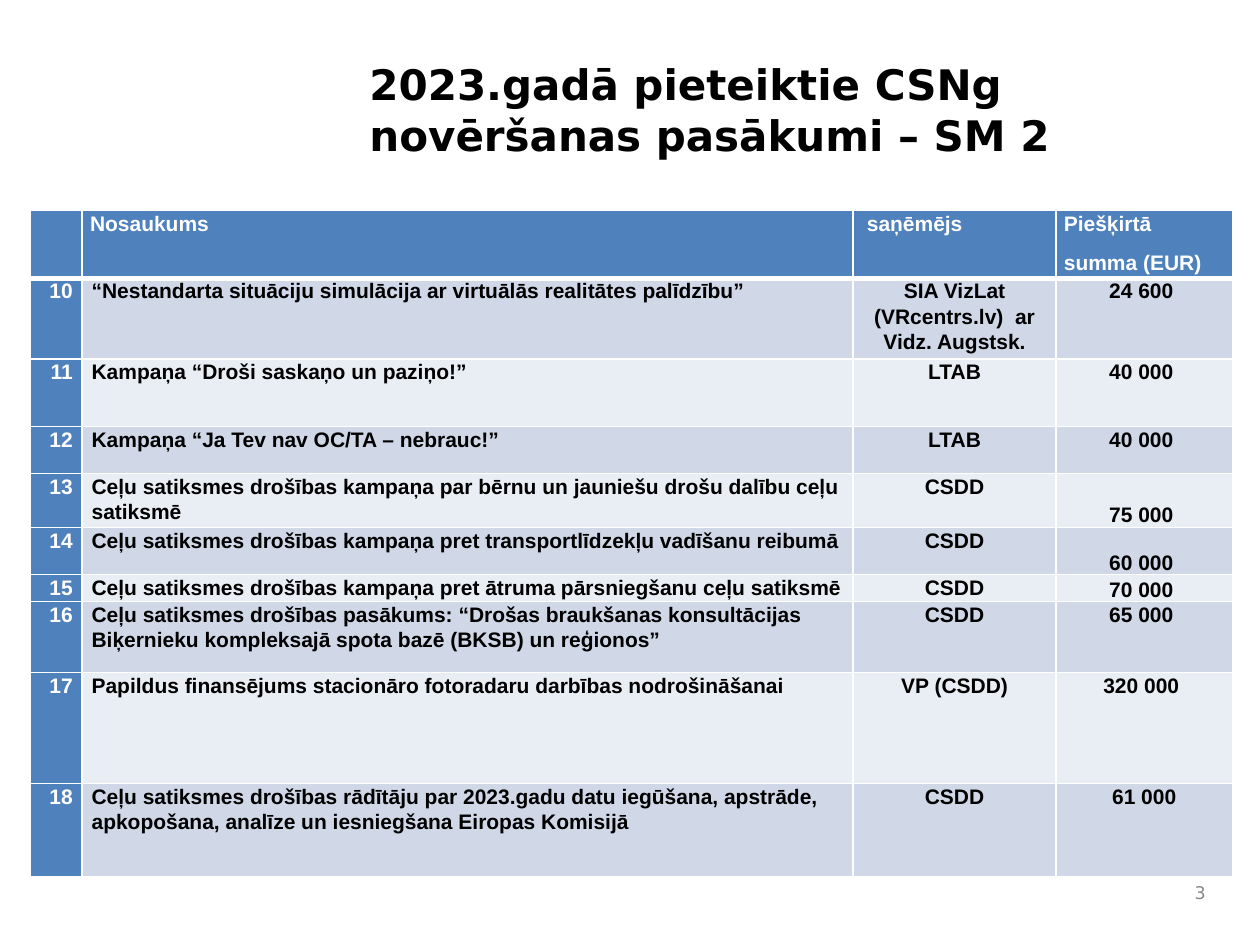
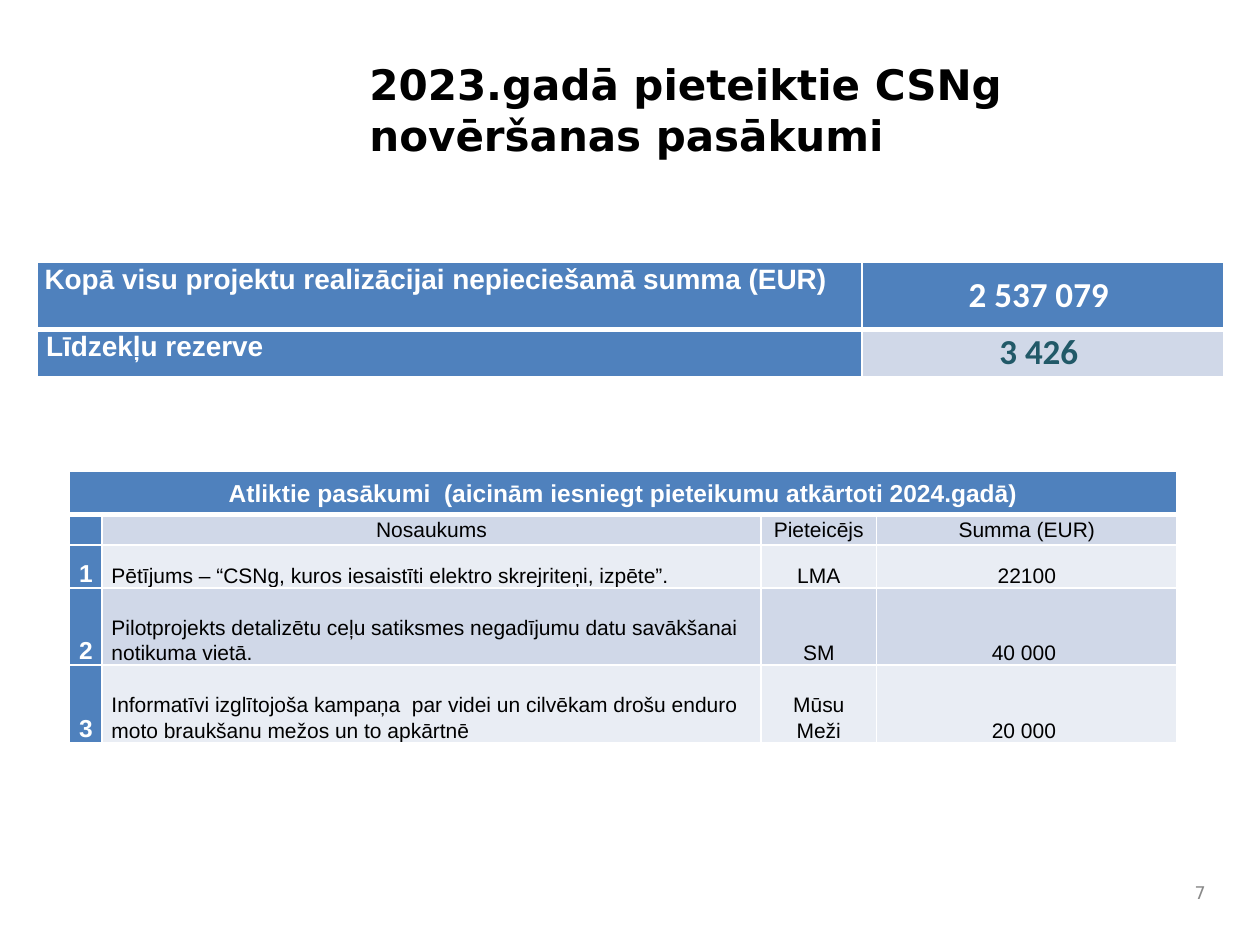
from dataclasses import dataclass, replace

from lxml.etree import SubElement
from pptx import Presentation
from pptx.dml.color import RGBColor
from pptx.enum.text import MSO_ANCHOR as Anchor, PP_ALIGN as Align
from pptx.oxml.ns import qn
from pptx.util import Pt

BLACK, WHITE, GREY, TEAL = "000000", "FFFFFF", "898989", "215968"
ACCENT, BANDS = "4F81BD", ("E9EDF4", "D0D8E8")


def rgb(value):
    return RGBColor.from_string(value)


@dataclass(frozen=True)
class Style:
    size: float = 12
    color: str = BLACK
    bold: bool = True
    font: str = "Arial"
    align: Align = Align.LEFT
    anchor: Anchor = Anchor.TOP
    inset: float = 5.4
    inset_y: float = 0
    spacing: float = 1.07
    after: float = 8


TITLE = Style(24, font="DejaVu Sans", inset=7.2, inset_y=3.6, spacing=1, after=6)
PAGE = replace(TITLE, size=10, color=GREY, bold=False, align=Align.RIGHT, anchor=Anchor.MIDDLE)
HEADER = Style(color=WHITE, align=Align.JUSTIFY, inset=4.5)
NUMBER = Style(color=WHITE, align=Align.RIGHT)
NAME = Style()
CENTRED = Style(align=Align.CENTER)
CENTRED_LOW = replace(CENTRED, anchor=Anchor.BOTTOM)
TOTAL_LABEL = replace(HEADER, size=16)
RESERVE_LABEL = Style(16, WHITE)
TOTAL = Style(20, WHITE, font="Calibri", align=Align.CENTER, anchor=Anchor.MIDDLE,
              inset=0.7, spacing=1, after=0)
RESERVE = replace(TOTAL, color=TEAL)
POSTPONED_HEAD = Style(14, WHITE, align=Align.CENTER, anchor=Anchor.MIDDLE)
POSTPONED_LABEL = replace(POSTPONED_HEAD, size=12, color=BLACK, bold=False)
POSTPONED_NUMBER = replace(NUMBER, size=14, anchor=Anchor.BOTTOM)
POSTPONED_NAME = Style(bold=False, anchor=Anchor.BOTTOM)
POSTPONED_CELL = replace(POSTPONED_NAME, align=Align.CENTER)


class Deck:
    def __init__(self):
        self.prs = Presentation()
        self.prs.slide_width, self.prs.slide_height = Pt(720), Pt(540)
        self.slide = None

    def add_slide(self, title, page):
        self.slide = self.prs.slides.add_slide(self.prs.slide_layouts[6])
        self.text(204, 30, 480, 81, title, TITLE)
        self.text(672, 498, 24, 24, page, PAGE)

    def fill_text(self, frame, text, style):
        for index, line in enumerate(text.split("\n")):
            paragraph = frame.paragraphs[0] if index == 0 else frame.add_paragraph()
            paragraph.alignment = style.align
            paragraph.line_spacing = style.spacing
            paragraph.space_after = Pt(style.after)
            if not line:
                SubElement(paragraph._p, qn("a:endParaRPr"), sz=str(style.size * 100))
                continue
            run = paragraph.add_run()
            run.text = line
            run.font.name, run.font.size = style.font, Pt(style.size)
            run.font.bold = style.bold
            run.font.color.rgb = rgb(style.color)

    def inset(self, holder, style):
        holder.margin_left = holder.margin_right = Pt(style.inset)
        holder.margin_top = holder.margin_bottom = Pt(style.inset_y)
        holder.vertical_anchor = style.anchor

    def text(self, left, top, width, height, text, style):
        frame = self.slide.shapes.add_textbox(Pt(left), Pt(top), Pt(width), Pt(height)).text_frame
        frame.word_wrap = True
        self.inset(frame, style)
        self.fill_text(frame, text, style)

    def borders(self, cell, row):
        widths = {"L": 1, "R": 1, "T": 3 if row == 1 else 1, "B": 3 if row == 0 else 1}
        for side, width in widths.items():
            line = SubElement(cell._tc.get_or_add_tcPr(), qn(f"a:ln{side}"), w=str(Pt(width)))
            SubElement(SubElement(line, qn("a:solidFill")), qn("a:srgbClr"), val=WHITE)

    def table(self, left, top, widths, heights, rows, merge_head=False):
        grid = self.slide.shapes.add_table(len(heights), len(widths), Pt(left), Pt(top),
                                           Pt(sum(widths)), Pt(sum(heights))).table
        for column, width in zip(grid.columns, widths):
            column.width = Pt(width)
        for row, height in zip(grid.rows, heights):
            row.height = Pt(height)
        if merge_head:
            grid.cell(0, 0).merge(grid.cell(0, len(widths) - 1))
        for r, row in enumerate(rows):
            for c, (text, style) in enumerate(row):
                cell = grid.cell(r, c)
                self.borders(cell, r)
                cell.fill.solid()
                cell.fill.fore_color.rgb = rgb(ACCENT if 0 in (r, c) else BANDS[r % 2])
                self.inset(cell, style)
                self.fill_text(cell.text_frame, text, style)


def styled(texts, *styles):
    return list(zip(texts, styles))


MEASURES = [
    ("“Nestandarta situāciju simulācija ar virtuālās realitātes palīdzību”",
     "SIA VizLat (VRcentrs.lv)  ar Vidz. Augstsk.", "24 600 "),
    ("Kampaņa “Droši saskaņo un paziņo!”", "LTAB", "40 000 "),
    ("Kampaņa “Ja Tev nav OC/TA – nebrauc!”", "LTAB", "40 000 "),
    ("Ceļu satiksmes drošības kampaņa par bērnu un jauniešu drošu dalību ceļu satiksmē",
     "CSDD", "75 000 "),
    ("Ceļu satiksmes drošības kampaņa pret transportlīdzekļu vadīšanu reibumā",
     "CSDD", "60 000 "),
    ("Ceļu satiksmes drošības kampaņa pret ātruma pārsniegšanu ceļu satiksmē",
     "CSDD", "70 000 "),
    ("Ceļu satiksmes drošības pasākums: “Drošas braukšanas konsultācijas Biķernieku "
     "kompleksajā spota bazē (BKSB) un reģionos”", "CSDD", "65 000 "),
    ("Papildus finansējums stacionāro fotoradaru darbības nodrošināšanai",
     "VP (CSDD)", "320 000 "),
    ("Ceļu satiksmes drošības rādītāju par 2023.gadu datu iegūšana, apstrāde, "
     "apkopošana, analīze un iesniegšana Eiropas Komisijā", "CSDD", "61 000"),
]
FIRST_MEASURE = 10
LOW_AMOUNTS = range(13, 16)

POSTPONED = [
    ("Pētījums – “CSNg, kuros iesaistīti elektro skrejriteņi, izpēte”.", "LMA", "22100"),
    ("Pilotprojekts detalizētu ceļu satiksmes negadījumu datu savākšanai notikuma vietā.",
     "SM", "40 000 "),
    ("Informatīvi izglītojoša kampaņa  par videi un cilvēkam drošu enduro moto braukšanu "
     "mežos un to apkārtnē", "Mūsu Meži", "20 000 "),
]


def measures_slide(deck):
    deck.add_slide("2023.gadā pieteiktie CSNg novēršanas pasākumi – SM 2", "3")
    rows = [styled(("", "Nosaukums", " saņēmējs", "Piešķirtā\nsumma (EUR)"), *[HEADER] * 4)]
    for number, measure in enumerate(MEASURES, FIRST_MEASURE):
        amount = CENTRED_LOW if number in LOW_AMOUNTS else CENTRED
        rows.append(styled((str(number), *measure), NUMBER, NAME, CENTRED, amount))
    deck.table(17.5, 120.2, [29.5, 440.6, 115.9, 100.8],
               [38.2, 27, 38.4, 27, 27, 27, 15, 40.5, 63.4, 53.2], rows)


def summary_slide(deck):
    deck.add_slide("2023.gadā pieteiktie CSNg novēršanas pasākumi", "7")
    deck.table(21, 150, [471.6, 206.6], [38.2, 27], [
        styled(("Kopā visu projektu realizācijai nepieciešamā summa (EUR) ", "2 537 079 "),
               TOTAL_LABEL, TOTAL),
        styled(("Līdzekļu rezerve", "3 426 "), RESERVE_LABEL, RESERVE),
    ])
    heading = "Atliktie pasākumi  (aicinām iesniegt pieteikumu atkārtoti 2024.gadā)"
    rows = [styled((heading,), POSTPONED_HEAD),
            styled(("", "Nosaukums", "Pieteicējs", "Summa (EUR)"), *[POSTPONED_LABEL] * 4)]
    for number, measure in enumerate(POSTPONED, 1):
        rows.append(styled((str(number), *measure), POSTPONED_NUMBER, POSTPONED_NAME,
                           POSTPONED_CELL, POSTPONED_CELL))
    deck.table(39.7, 269.4, [18.6, 376.6, 66, 171.8], [24.5, 17.5, 24.5, 44.2, 44.2],
               rows, merge_head=True)


def main():
    deck = Deck()
    measures_slide(deck)
    summary_slide(deck)
    deck.prs.save("out.pptx")


if __name__ == "__main__":
    main()
